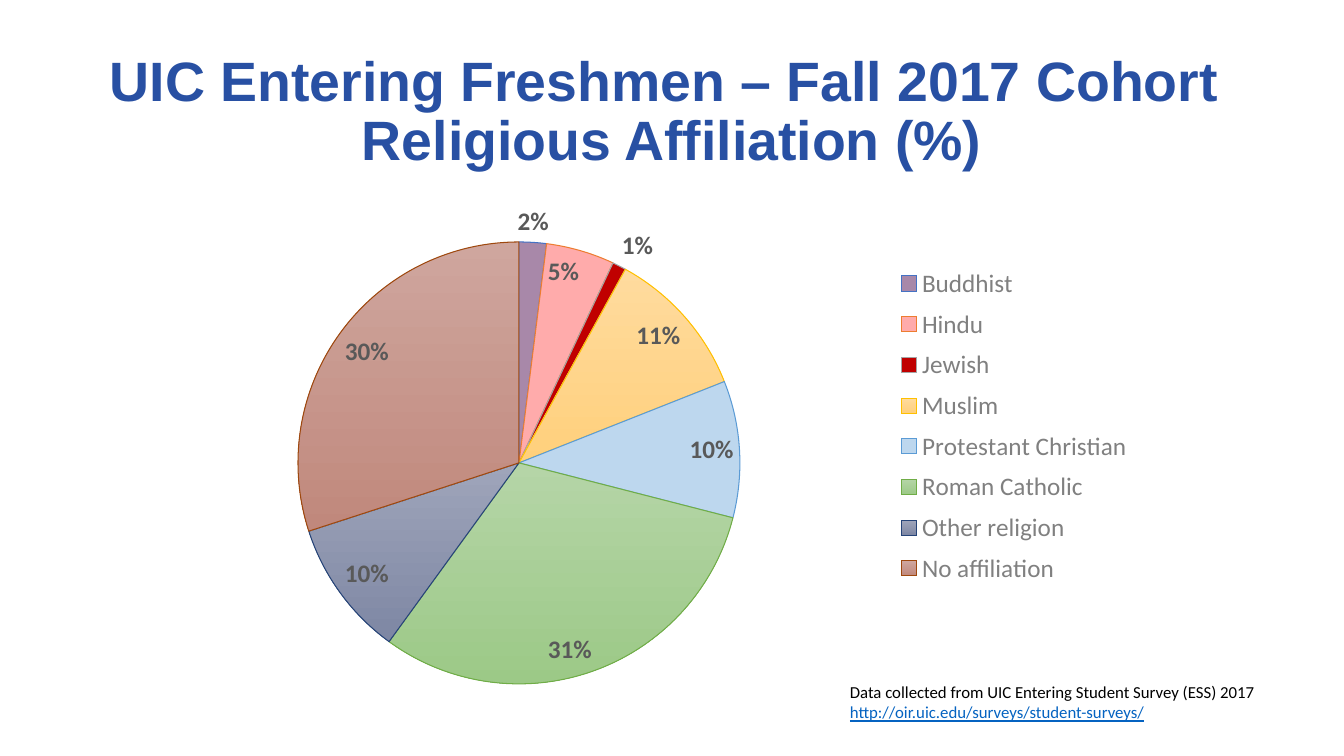
from typing import NamedTuple, Optional

from lxml import etree
from pptx import Presentation
from pptx import util as u
from pptx.chart import data as cd
from pptx.dml.color import RGBColor
from pptx.enum import chart as ch, text
from pptx.oxml.ns import qn

EMU_PER_INCH = 914400
PX_PER_INCH = 100.8

TITLE_BLUE = RGBColor(0x28, 0x50, 0xA3)
LEGEND_GRAY = RGBColor(0x80, 0x80, 0x80)
LABEL_GRAY = RGBColor(0x59, 0x59, 0x59)
BLACK = RGBColor(0, 0, 0)
LINK_BLUE = RGBColor(0x05, 0x63, 0xC1)


class Slice(NamedTuple):
    name: str
    percent: int
    fill: RGBColor
    line: RGBColor
    fill_end: Optional[RGBColor] = None
    outside: bool = False


class Box(NamedTuple):
    x: int
    y: int
    w: int
    h: int


TITLE_BOX = Box(92, 40, 1160, 146)
CHART_BOX = Box(142, 191, 1004, 506)
PIE_BOX = Box(298, 242, 442, 442)
LEGEND_BOX = Box(894, 258, 240, 336)
SOURCE_BOX = Box(840, 677, 444, 50)

SLICES = [
    Slice("Buddhist", 2, RGBColor(0xA8, 0x88, 0xA9), RGBColor(0x44, 0x72, 0xC4), outside=True),
    Slice("Hindu", 5, RGBColor(0xFF, 0xAB, 0xAB), RGBColor(0xED, 0x7D, 0x31)),
    Slice("Jewish", 1, RGBColor(0xC0, 0x00, 0x00), RGBColor(0xA5, 0xA5, 0xA5), outside=True),
    Slice("Muslim", 11, RGBColor(0xFF, 0xDB, 0x9E), RGBColor(0xFF, 0xC0, 0x00),
          RGBColor(0xFF, 0xD0, 0x7C)),
    Slice("Protestant Christian", 10, RGBColor(0xBD, 0xD7, 0xEE), RGBColor(0x5B, 0x9B, 0xD5)),
    Slice("Roman Catholic", 31, RGBColor(0xB5, 0xD5, 0xA7), RGBColor(0x70, 0xAD, 0x47),
          RGBColor(0x9C, 0xC9, 0x87)),
    Slice("Other religion", 10, RGBColor(0x9F, 0xA5, 0xBA), RGBColor(0x26, 0x44, 0x78),
          RGBColor(0x7E, 0x87, 0xA4)),
    Slice("No affiliation", 30, RGBColor(0xCF, 0xA6, 0x9E), RGBColor(0x9E, 0x48, 0x0E),
          RGBColor(0xC0, 0x88, 0x7C)),
]


def px(n: int) -> u.Emu:
    return u.Emu(round(n * EMU_PER_INCH / PX_PER_INCH))


def emu(box: Box) -> list:
    return [px(n) for n in box]


def set_font(font, name: str, size: float, color: RGBColor, bold: bool = False) -> None:
    font.name, font.size, font.bold = name, u.Pt(size), bold
    font.color.rgb = color


def set_layout(parent, index: int, box: Box, inner: bool = False) -> None:
    for old in parent.findall(qn("c:layout")):
        parent.remove(old)
    layout = etree.Element(qn("c:layout"))
    parent.insert(index, layout)
    manual = etree.SubElement(layout, qn("c:manualLayout"))
    settings = [("layoutTarget", "inner")] if inner else []
    settings += [
        ("xMode", "edge"),
        ("yMode", "edge"),
        ("x", f"{(box.x - CHART_BOX.x) / CHART_BOX.w:.4f}"),
        ("y", f"{(box.y - CHART_BOX.y) / CHART_BOX.h:.4f}"),
        ("w", f"{box.w / CHART_BOX.w:.4f}"),
        ("h", f"{box.h / CHART_BOX.h:.4f}"),
    ]
    for tag, val in settings:
        etree.SubElement(manual, qn(f"c:{tag}")).set("val", val)


def format_slice(point, item: Slice) -> None:
    fill = point.format.fill
    if item.fill_end is None:
        fill.solid()
        fill.fore_color.rgb = item.fill
    else:
        fill.gradient()
        fill.gradient_angle = 270
        for stop, color in zip(fill.gradient_stops, (item.fill, item.fill_end)):
            stop.color.rgb = color
    point.format.line.color.rgb = item.line
    point.format.line.width = u.Pt(0.75)
    if item.outside:
        set_font(point.data_label.font, "Calibri", 18, LABEL_GRAY, True)
        point.data_label.position = ch.XL_LABEL_POSITION.OUTSIDE_END


def add_pie(s) -> None:
    data = cd.CategoryChartData()
    data.categories = [item.name for item in SLICES]
    data.add_series("Series 1", [item.percent for item in SLICES])
    chart = s.shapes.add_chart(ch.XL_CHART_TYPE.PIE, *emu(CHART_BOX), data).chart
    set_font(chart.font, "Calibri", 10, BLACK)
    chart.has_title = False

    chart.has_legend = True
    chart.legend.position = ch.XL_LEGEND_POSITION.RIGHT
    chart.legend.include_in_layout = False
    set_font(chart.legend.font, "Calibri", 18, LEGEND_GRAY)

    plot = chart.plots[0]
    plot.vary_by_categories = True
    series = plot.series[0]
    labels = series.data_labels
    labels.show_value, labels.show_percentage = False, True
    labels.number_format, labels.number_format_is_linked = "0%", False
    labels.position = ch.XL_LABEL_POSITION.INSIDE_END
    set_font(labels.font, "Calibri", 18, LABEL_GRAY, True)
    for i, item in enumerate(SLICES):
        format_slice(series.points[i], item)

    root = chart.element
    for tag, val in (("showVal", "0"), ("showPercent", "1")):
        for flag in root.xpath(f".//c:dLbl/c:{tag}"):
            flag.set("val", val)
    set_layout(root.xpath(".//c:plotArea")[0], 0, PIE_BOX, inner=True)
    set_layout(root.xpath(".//c:legend")[0], 1, LEGEND_BOX)


def add_title(s) -> None:
    sp = s.shapes.title
    sp.left, sp.top, sp.width, sp.height = emu(TITLE_BOX)
    tf = sp.text_frame
    tf.text = "UIC Entering Freshmen – Fall 2017 Cohort \vReligious Affiliation (%)"
    tf.vertical_anchor = text.MSO_ANCHOR.MIDDLE
    p = tf.paragraphs[0]
    p.alignment = text.PP_ALIGN.CENTER
    p.line_spacing = 0.9
    for r in p.runs:
        set_font(r.font, "Arial", 39.6, TITLE_BLUE, True)


def add_source(s) -> None:
    tf = s.shapes.add_textbox(*emu(SOURCE_BOX)).text_frame
    tf.word_wrap = True
    tf.text = ("Data collected from UIC Entering Student Survey (ESS) 2017\n"
               "http://oir.uic.edu/surveys/student-surveys/")
    for p, color in zip(tf.paragraphs, (BLACK, LINK_BLUE)):
        set_font(p.runs[0].font, "Calibri", 12, color)
    tf.paragraphs[1].runs[0].font.underline = True


def main() -> None:
    prs = Presentation()
    prs.slide_width, prs.slide_height = px(1344), px(756)
    s = prs.slides.add_slide(prs.slide_layouts[5])
    add_title(s)
    add_pie(s)
    add_source(s)
    prs.save("out.pptx")


if __name__ == "__main__":
    main()
